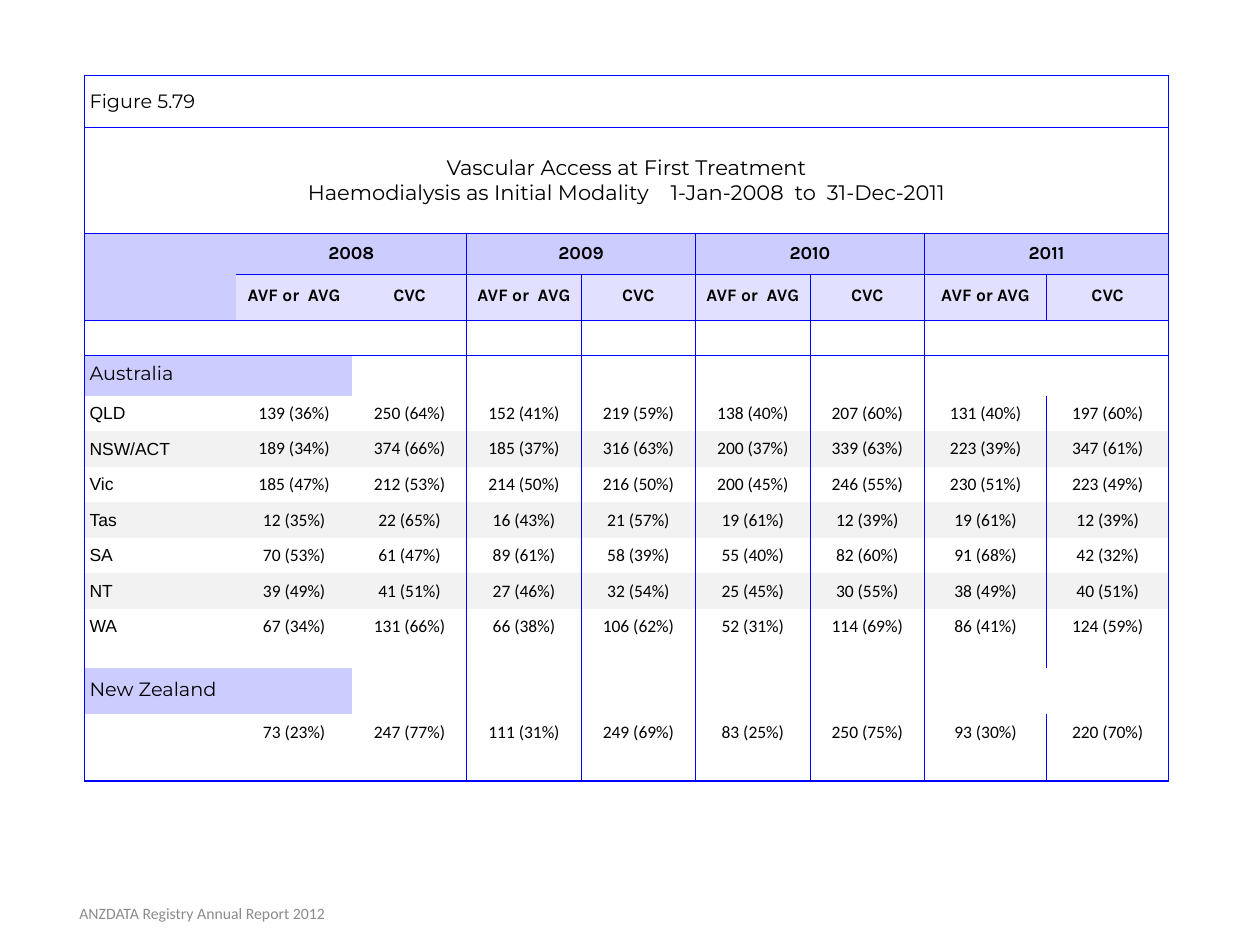
from lxml.etree import SubElement
from pptx import Presentation
from pptx.dml.color import RGBColor
from pptx.enum.text import MSO_ANCHOR, PP_ALIGN
from pptx.oxml.ns import qn
from pptx.util import Pt

# Content
FIGURE = "Figure 5.79"
TITLE = ("Vascular Access at First Treatment\n"
         "Haemodialysis as Initial Modality    1-Jan-2008  to  31-Dec-2011")
YEARS = ["2008", "2009", "2010", "2011"]
ACCESS_TYPES = ["AVF or  AVG", "CVC"] * 3 + ["AVF or AVG", "CVC"]
STATES = [
    ("QLD", "139 (36%)", "250 (64%)", "152 (41%)", "219 (59%)",
     "138 (40%)", "207 (60%)", "131 (40%)", "197 (60%)"),
    ("NSW/ACT", "189 (34%)", "374 (66%)", "185 (37%)", "316 (63%)",
     "200 (37%)", "339 (63%)", "223 (39%)", "347 (61%)"),
    ("Vic", "185 (47%)", "212 (53%)", "214 (50%)", "216 (50%)",
     "200 (45%)", "246 (55%)", "230 (51%)", "223 (49%)"),
    ("Tas", "12 (35%)", "22 (65%)", "16 (43%)", "21 (57%)",
     "19 (61%)", "12 (39%)", "19 (61%)", "12 (39%)"),
    ("SA", "70 (53%)", "61 (47%)", "89 (61%)", "58 (39%)",
     "55 (40%)", "82 (60%)", "91 (68%)", "42 (32%)"),
    ("NT", "39 (49%)", "41 (51%)", "27 (46%)", "32 (54%)",
     "25 (45%)", "30 (55%)", "38 (49%)", "40 (51%)"),
    ("WA", "67 (34%)", "131 (66%)", "66 (38%)", "106 (62%)",
     "52 (31%)", "114 (69%)", "86 (41%)", "124 (59%)"),
]
NEW_ZEALAND = ("", "73 (23%)", "247 (77%)", "111 (31%)", "249 (69%)",
               "83 (25%)", "250 (75%)", "93 (30%)", "220 (70%)")
FOOTER = "ANZDATA Registry Annual Report 2012"

# Each text style: font, size, bold, colour, line spacing
THEME = {
    "figure": ("Montserrat", 11, False, "000000", 1),
    "title": ("Montserrat", 12, False, "000000", 1),
    "year": ("Karla", 10.5, True, "000000", 1),
    "access": ("Karla", 10, True, "000000", 0.75),
    "country": ("Montserrat", 11, False, "000000", 0.75),
    "state": ("Arial", 10, False, "000000", 1),
    "value": ("Calibri", 10, False, "000000", 1),
    "footer": ("Calibri", 9, False, "8C8C8C", 1),
    "line": "0000FF", "header": "CCCCFF", "subheader": "E1E1FF", "band": "F2F2F2",
}
NO_STYLE = "{2D5ABB26-0587-4C30-8999-92F81FD0307C}"

# Layout: row numbers, sizes and rules
YEAR_ROW, ACCESS_ROW, AUSTRALIA_ROW, STATE_ROW = 2, 3, 5, 6
NEW_ZEALAND_ROW = STATE_ROW + len(STATES) + 1
WIDTHS = [86.5, 66.5] + [65.4] * 5 + [69.8] * 2
HEIGHTS = [29.6, 60.5, 23.3, 26.7, 20, 22.9] + [20.35] * 7 + [13.5, 26.2, 20.9, 17.3]
ROW_COUNT, COLUMN_COUNT = len(HEIGHTS), len(WIDTHS)
ROW_LINES = {0: 1, 1: 1, 2: 1, 3: 0.5, 4: 1, ROW_COUNT: 1}
COLUMN_LINES = {0: 1, 3: 0.5, 5: 0.5, 7: 0.75, COLUMN_COUNT: 1}


def write(frame, text, style, align=PP_ALIGN.CENTER):
    font, size, bold, colour, spacing = THEME[style]
    frame.text = text
    for paragraph in frame.paragraphs:
        paragraph.alignment = align
        if spacing != 1:
            paragraph.line_spacing = spacing
        for span in paragraph.runs:
            span.font.name, span.font.size, span.font.bold = font, Pt(size), bold
            span.font.color.rgb = RGBColor.from_string(colour)


def add_borders(cell, row, column):
    bottom, right = row + cell.span_height, column + cell.span_width
    edges = {
        "L": COLUMN_LINES.get(column), "R": COLUMN_LINES.get(right),
        "T": ROW_LINES.get(row), "B": ROW_LINES.get(bottom),
    }
    if column == 0 and row == ACCESS_ROW:
        edges["T"] = None
    properties = cell._tc.get_or_add_tcPr()
    for side, width in edges.items():
        if width:
            line = SubElement(properties, qn(f"a:ln{side}"), w=str(Pt(width)))
            fill = SubElement(line, qn("a:solidFill"))
            SubElement(fill, qn("a:srgbClr"), val=THEME["line"])


def fill_colour(row, column):
    if row == YEAR_ROW or (row == ACCESS_ROW and column == 0):
        return THEME["header"]
    if row == ACCESS_ROW:
        return THEME["subheader"]
    if row in (AUSTRALIA_ROW, NEW_ZEALAND_ROW) and column < 2:
        return THEME["header"]
    state = row - STATE_ROW
    return THEME["band"] if 0 <= state < len(STATES) and state % 2 else None


deck = Presentation()
deck.slide_width, deck.slide_height = Pt(720), Pt(540)
page = deck.slides.add_slide(deck.slide_layouts[6])

# Table grid
frame = page.shapes.add_table(ROW_COUNT, COLUMN_COUNT, Pt(48.3), Pt(43.2),
                              Pt(sum(WIDTHS)), Pt(sum(HEIGHTS)))
table = frame.table
table.first_row = table.horz_banding = False
table._tbl.tblPr.find(qn("a:tableStyleId")).text = NO_STYLE
for column, width in zip(table.columns, WIDTHS):
    column.width = Pt(width)
for row, height in zip(table.rows, HEIGHTS):
    row.height = Pt(height)

# Merged cells
for row in (0, 1):
    table.cell(row, 0).merge(table.cell(row, COLUMN_COUNT - 1))
table.cell(YEAR_ROW, 0).merge(table.cell(ACCESS_ROW, 0))
for column in range(1, COLUMN_COUNT, 2):
    table.cell(YEAR_ROW, column).merge(table.cell(YEAR_ROW, column + 1))
for row in (ACCESS_ROW + 1, AUSTRALIA_ROW, NEW_ZEALAND_ROW):
    table.cell(row, 0).merge(table.cell(row, 1))

# Headings
write(table.cell(0, 0).text_frame, FIGURE, "figure", PP_ALIGN.LEFT)
write(table.cell(1, 0).text_frame, TITLE, "title")
for index, year in enumerate(YEARS):
    write(table.cell(YEAR_ROW, 1 + 2 * index).text_frame, year, "year")
for column, access in enumerate(ACCESS_TYPES, 1):
    write(table.cell(ACCESS_ROW, column).text_frame, access, "access")
for row, country in ((AUSTRALIA_ROW, "Australia"), (NEW_ZEALAND_ROW, "New Zealand")):
    write(table.cell(row, 0).text_frame, country, "country", PP_ALIGN.LEFT)

# Counts and shares
records = list(enumerate(STATES, STATE_ROW)) + [(NEW_ZEALAND_ROW + 1, NEW_ZEALAND)]
for row, (state, *values) in records:
    write(table.cell(row, 0).text_frame, state, "state", PP_ALIGN.LEFT)
    for column, value in enumerate(values, 1):
        write(table.cell(row, column).text_frame, value, "value")

# Cell margins, borders and fills
for row in range(ROW_COUNT):
    for column in range(COLUMN_COUNT):
        cell = table.cell(row, column)
        cell.vertical_anchor = MSO_ANCHOR.MIDDLE
        cell.margin_left = cell.margin_right = Pt(2.9)
        cell.margin_top = cell.margin_bottom = Pt(2.9)
        add_borders(cell, row, column)
        colour = fill_colour(row, column)
        if colour:
            cell.fill.solid()
            cell.fill.fore_color.rgb = RGBColor.from_string(colour)
        else:
            cell.fill.background()
        if not cell.text_frame.text:  # keeps empty cells from stretching their row
            SubElement(cell.text_frame.paragraphs[0]._p, qn("a:endParaRPr"), sz="600")

# Footer
box = page.shapes.add_textbox(Pt(1.4), Pt(507.6), Pt(228.2), Pt(28.8))
box.text_frame.word_wrap = True
box.text_frame.vertical_anchor = MSO_ANCHOR.MIDDLE
write(box.text_frame, FOOTER, "footer")

deck.save("out.pptx")
